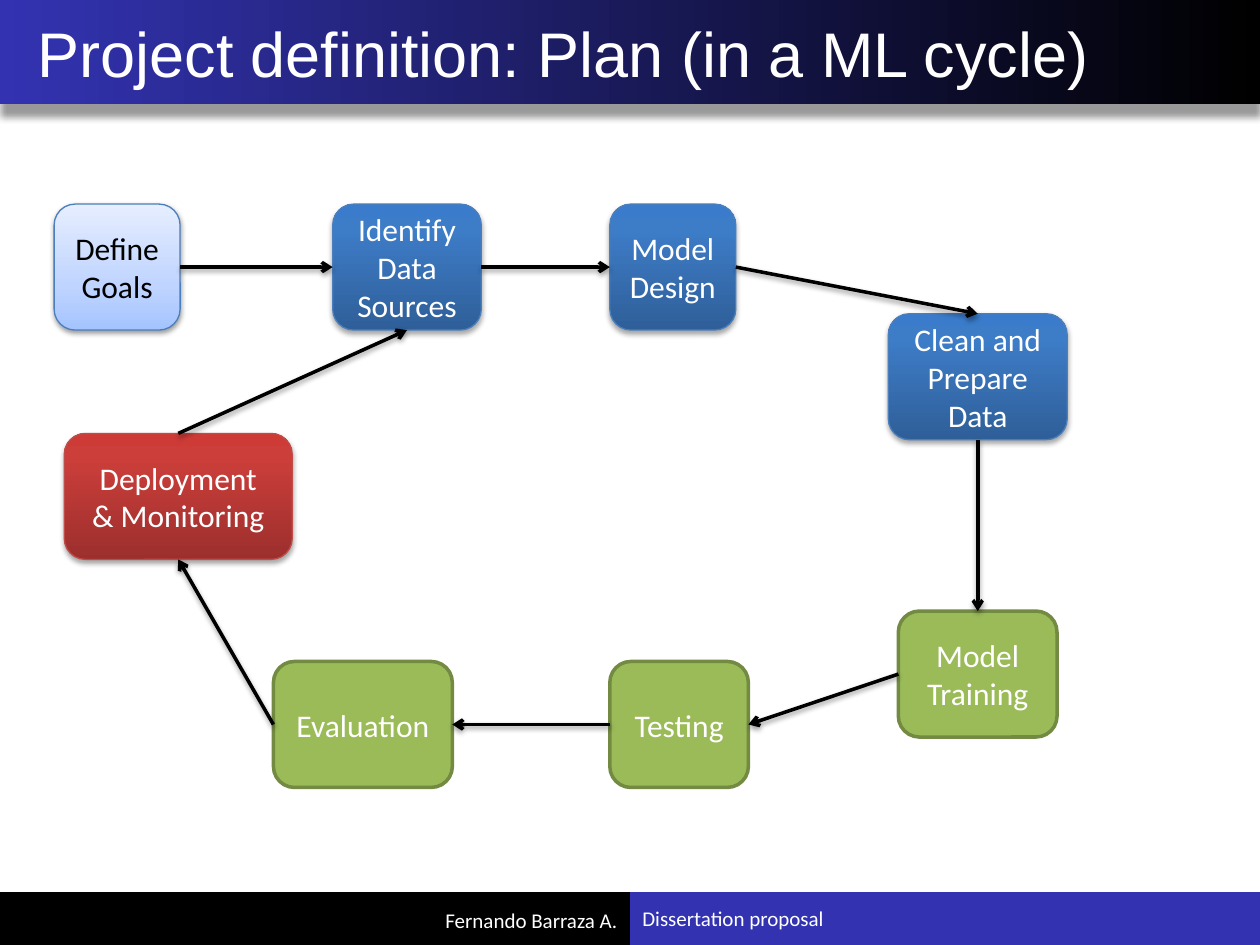
from dataclasses import dataclass
from typing import NamedTuple, Optional

from lxml import etree
from pptx import Presentation
from pptx import util as u
from pptx.dml.color import RGBColor
from pptx.enum import shapes, text
from pptx.oxml.ns import qn

WIDE, HIGH = u.Inches(10), u.Inches(7.5)
COLS, ROWS = 100, 75
TOP, LEFT, BASE, RIGHT = range(4)
Stops = tuple[tuple[int, str], ...]


class Area(NamedTuple):
    col: float
    row: float
    cols: float
    rows: float

    def frame(self) -> tuple[int, ...]:
        dx, dy = WIDE / COLS, HIGH / ROWS
        return tuple(int(v) for v in (self.col * dx, self.row * dy,
                                      self.cols * dx, self.rows * dy))


class Shade(NamedTuple):
    alpha: int
    blur: float
    drop: float


class Look(NamedTuple):
    stops: Stops
    angle: int = 270
    edge: Optional[str] = None
    weight: float = 0.75
    ink: str = "FFFFFF"
    shade: Optional[Shade] = None


class Step(NamedTuple):
    label: str
    area: Area
    look: Look


class Link(NamedTuple):
    start: str
    out: int
    end: str
    into: int


@dataclass(frozen=True)
class Theme:
    white: str = "FFFFFF"
    black: str = "000000"
    blue: str = "3333B2"
    head: str = "Arial"
    body: str = "Calibri"
    large: int = 36
    mid: int = 18
    small: int = 12
    stroke: float = 2
    soft: Shade = Shade(38, 3.1, 1.6)
    firm: Shade = Shade(35, 3.1, 1.8)
    deep: Shade = Shade(40, 4, 7)


T = Theme()
GOAL = Look(((0, "A4C4FF"), (35, "BFD4FF"), (100, "E6EEFF")),
            edge="4B7EBC", ink=T.black, shade=T.soft)
DATA = Look(((0, "2F5F99"), (80, "3D7CC7"), (100, "3A7CCB")),
            edge="4B7EBC", shade=T.firm)
MODEL = Look(((0, "9BBB59"),), edge="738A42", weight=T.stroke)
LIVE = Look(((0, "9C2F2D"), (80, "CB3E3A"), (100, "CE3B37")),
            edge="BF4C48", shade=T.firm)
BANNER = Look(((0, T.black), (100, T.blue)), angle=180, shade=T.deep)

UPPER, LOWER, SIDE = 16.2, 52.5, 10
STEPS = {
    "goals": Step("Define Goals", Area(4.3, UPPER, 10, SIDE), GOAL),
    "design": Step("Model Design", Area(48.4, UPPER, 10, SIDE), DATA),
    "source": Step("Identify Data Sources", Area(26.4, UPPER, 11.8, SIDE), DATA),
    "clean": Step("Clean and Prepare Data", Area(70.5, 24.9, 14.2, SIDE), DATA),
    "train": Step("Model Training", Area(71.3, 48.5, 12.6, SIDE), MODEL),
    "test": Step("Testing", Area(48.4, LOWER, 11, SIDE), MODEL),
    "judge": Step("Evaluation", Area(21.7, LOWER, 14.2, SIDE), MODEL),
    "deploy": Step("Deployment\n& Monitoring", Area(5.1, 34.4, 18.1, SIDE), LIVE),
}
LINKS = (
    Link("goals", RIGHT, "source", LEFT),
    Link("source", RIGHT, "design", LEFT),
    Link("design", RIGHT, "clean", TOP),
    Link("clean", BASE, "train", TOP),
    Link("train", LEFT, "test", RIGHT),
    Link("test", LEFT, "judge", RIGHT),
    Link("judge", LEFT, "deploy", BASE),
    Link("deploy", TOP, "source", BASE),
)


def tint(name: str) -> RGBColor:
    return RGBColor.from_string(name)


def add_stop(parent, tag: str, name: str, **attrs: str):
    node = etree.SubElement(parent, qn(tag), **attrs)
    return etree.SubElement(node, qn("a:srgbClr"), val=name)


def cast(item, shade: Optional[Shade]) -> None:
    group = etree.SubElement(item._element.spPr, qn("a:effectLst"))
    if shade:
        ink = add_stop(group, "a:outerShdw", T.black,
                       blurRad=str(u.Pt(shade.blur)), dist=str(u.Pt(shade.drop)),
                       dir="5400000", rotWithShape="0")
        etree.SubElement(ink, qn("a:alpha"), val=str(shade.alpha * 1000))


def paint(item, look: Look) -> None:
    if len(look.stops) == 1:
        item.fill.solid()
        item.fill.fore_color.rgb = tint(look.stops[0][1])
        return
    item.fill.gradient()
    grad = item._element.spPr.find(qn("a:gradFill"))
    stops = grad.find(qn("a:gsLst"))
    for old in list(stops):
        stops.remove(old)
    for place, name in look.stops:
        add_stop(stops, "a:gs", name, pos=str(place * 1000))
    grad.find(qn("a:lin")).set("ang", str(look.angle * 60000))


def write(item, words: str, *, size: int, font: str = T.body, ink: str = T.white,
          align=text.PP_ALIGN.LEFT, indent: float = 0) -> None:
    frame = item.text_frame
    frame.word_wrap = True
    frame.vertical_anchor = text.MSO_ANCHOR.MIDDLE
    frame.text = words
    for para in frame.paragraphs:
        para.alignment = align
        if indent:
            para._p.get_or_add_pPr().set("marL", str(int(indent * WIDE / COLS)))
        para.font.name, para.font.size = font, u.Pt(size)
        para.font.color.rgb = tint(ink)


def draw_box(slide, area: Area, look: Look, kind=shapes.MSO_SHAPE.RECTANGLE):
    box = slide.shapes.add_shape(kind, *area.frame())
    paint(box, look)
    if look.edge:
        box.line.color.rgb = tint(look.edge)
        box.line.width = u.Pt(look.weight)
    else:
        box.line.fill.background()
    cast(box, look.shade)
    return box


def draw_step(slide, step: Step):
    box = draw_box(slide, step.area, step.look, shapes.MSO_SHAPE.ROUNDED_RECTANGLE)
    write(box, step.label, size=T.mid, ink=step.look.ink,
          align=text.PP_ALIGN.CENTER)
    return box


def draw_link(slide, link: Link, boxes: dict) -> None:
    line = slide.shapes.add_connector(shapes.MSO_CONNECTOR.STRAIGHT, 0, 0, 0, 0)
    line.begin_connect(boxes[link.start], link.out)
    line.end_connect(boxes[link.end], link.into)
    line.line.color.rgb = tint(T.black)
    line.line.width = u.Pt(T.stroke)
    etree.SubElement(line.line._get_or_add_ln(), qn("a:tailEnd"), type="arrow")
    cast(line, T.soft)


def draw_frame(slide) -> None:
    half, foot, band = COLS / 2, 70.8, Area(0, 0, COLS, 8.3)
    right = draw_box(slide, Area(half, foot, half, ROWS - foot),
                     Look(((0, T.blue),)))
    write(right, "Dissertation proposal", size=T.small)
    draw_box(slide, Area(0, foot, half, ROWS - foot), Look(((0, T.black),)))
    draw_box(slide, band, BANNER)
    name = slide.shapes.add_textbox(*Area(11.7, 71, half - 11.7, 4).frame())
    write(name, "Fernando Barraza A.", size=T.small, align=text.PP_ALIGN.RIGHT)
    title = slide.shapes.add_textbox(*band.frame())
    write(title, "Project definition: Plan (in a ML cycle)",
          size=T.large, font=T.head, indent=2)


def main() -> None:
    deck = Presentation()
    deck.slide_width, deck.slide_height = WIDE, HIGH
    slide = deck.slides.add_slide(deck.slide_layouts[6])
    draw_frame(slide)
    boxes = {key: draw_step(slide, step) for key, step in STEPS.items()}
    for link in LINKS:
        draw_link(slide, link, boxes)
    deck.save("out.pptx")


if __name__ == "__main__":
    main()
